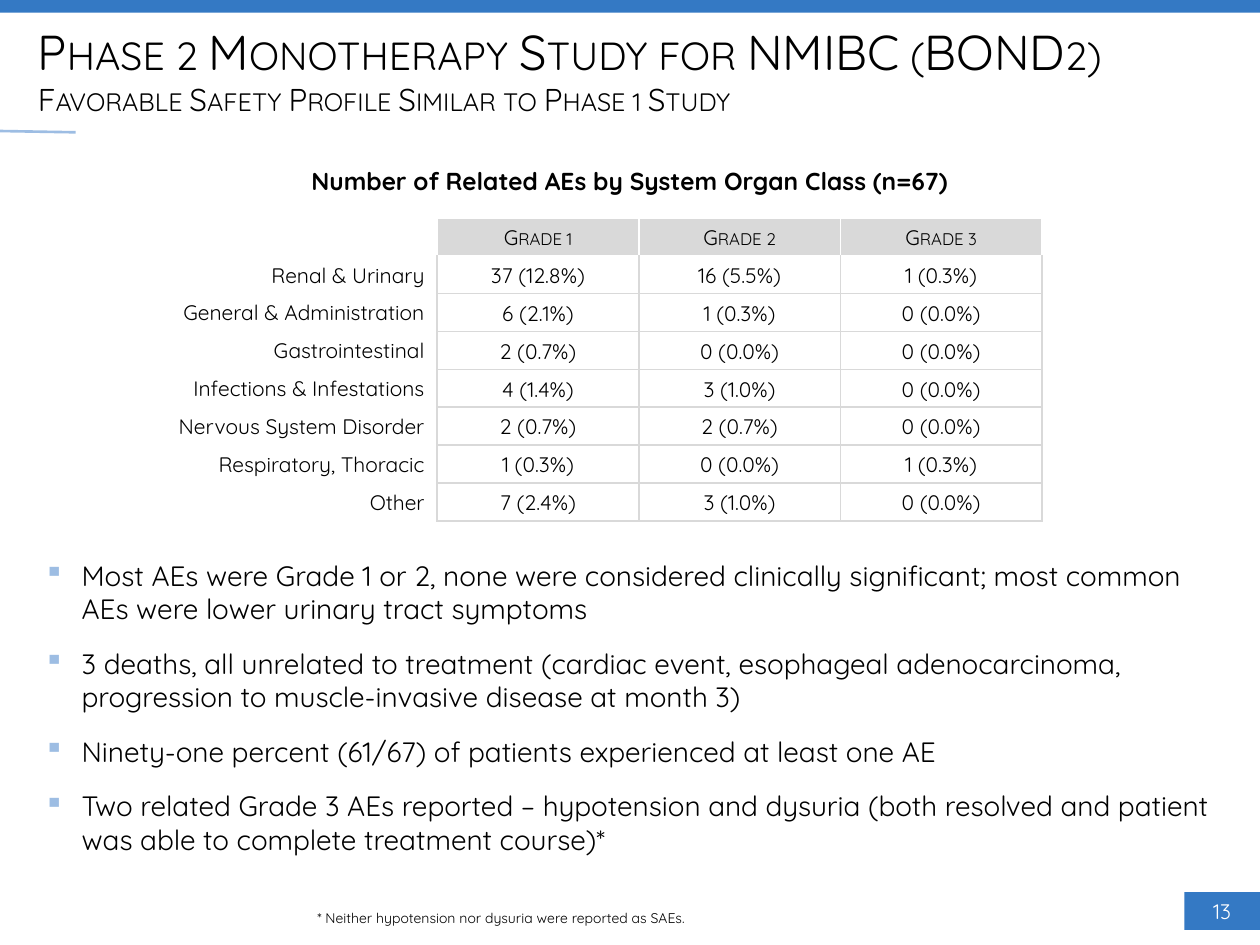
import lxml.etree
import pptx
import pptx.dml.color
import pptx.enum.shapes
import pptx.enum.text
import pptx.oxml.ns
import pptx.util

Inches = pptx.util.Inches
Pt = pptx.util.Pt
RGBColor = pptx.dml.color.RGBColor
Align = pptx.enum.text.PP_ALIGN
Anchor = pptx.enum.text.MSO_ANCHOR
qn = pptx.oxml.ns.qn

BLUE = RGBColor(0x34, 0x79, 0xC4)
LIGHT_BLUE = RGBColor(0x9D, 0xBD, 0xE3)
GREY = RGBColor(0xD9, 0xD9, 0xD9)
WHITE = RGBColor(0xFF, 0xFF, 0xFF)
BLACK = RGBColor(0, 0, 0)
FONT = "Quicksand"

GRADES = ["Grade 1", "Grade 2", "Grade 3"]
EVENTS = [
    ("Renal & Urinary", "37 (12.8%)", "16 (5.5%)", "1 (0.3%)"),
    ("General & Administration", "6 (2.1%)", "1 (0.3%)", "0 (0.0%)"),
    ("Gastrointestinal", "2 (0.7%)", "0 (0.0%)", "0 (0.0%)"),
    ("Infections & Infestations", "4 (1.4%)", "3 (1.0%)", "0 (0.0%)"),
    ("Nervous System Disorder", "2 (0.7%)", "2 (0.7%)", "0 (0.0%)"),
    ("Respiratory, Thoracic", "1 (0.3%)", "0 (0.0%)", "1 (0.3%)"),
    ("Other", "7 (2.4%)", "3 (1.0%)", "0 (0.0%)"),
]
FINDINGS = [
    "Most AEs were Grade 1 or 2, none were considered clinically significant; "
    "most common AEs were lower urinary tract symptoms",
    "3 deaths, all unrelated to treatment (cardiac event, esophageal "
    "adenocarcinoma, progression to muscle-invasive disease at month 3)",
    "Ninety-one percent (61/67) of patients experienced at least one AE",
    "Two related Grade 3 AEs reported – hypotension and dysuria (both resolved "
    "and patient was able to complete treatment course)*",
]


def style_font(font, size, color=BLACK, bold=False, small_caps=False):
    font.name = FONT
    font.size = Pt(size)
    font.bold = bold
    font.color.rgb = color
    if small_caps:
        font._element.set("cap", "small")


def add_bar(slide, left, top, width, height):
    bar = slide.shapes.add_shape(
        pptx.enum.shapes.MSO_SHAPE.RECTANGLE,
        Inches(left), Inches(top), Inches(width), Inches(height))
    bar.shadow.inherit = False
    bar.fill.solid()
    bar.fill.fore_color.rgb = BLUE
    bar.line.fill.background()
    return bar


def add_text_frame(slide, left, top, width, height, anchor=Anchor.TOP):
    box = slide.shapes.add_textbox(
        Inches(left), Inches(top), Inches(width), Inches(height))
    frame = box.text_frame
    frame.word_wrap = True
    frame.vertical_anchor = anchor
    return frame


def add_line_of_text(slide, box, text, size, align, bold=False):
    paragraph = add_text_frame(slide, *box, Anchor.BOTTOM).paragraphs[0]
    paragraph.text = text
    paragraph.alignment = align
    style_font(paragraph.font, size, bold=bold)
    return paragraph


def add_accent_line(slide, left, top, right, bottom):
    line = slide.shapes.add_connector(
        pptx.enum.shapes.MSO_CONNECTOR.STRAIGHT,
        Inches(left), Inches(top), Inches(right), Inches(bottom))
    line.line.color.rgb = LIGHT_BLUE
    line.line.width = Pt(1.5)
    lxml.etree.SubElement(line._element.spPr, qn("a:effectLst"))


def add_page_number(slide, left, top, width, height, number):
    frame = add_bar(slide, left, top, width, height).text_frame
    frame.vertical_anchor = Anchor.MIDDLE
    paragraph = frame.paragraphs[0]
    paragraph.text = number
    paragraph.alignment = Align.CENTER
    style_font(paragraph.font, 12, WHITE)


def add_title(slide, left, top, width, height, title, subtitle):
    frame = add_text_frame(slide, left, top, width, height)
    frame.margin_left = frame.margin_right = Inches(0.3)
    paragraph = frame.paragraphs[0]
    title_run = paragraph.add_run()
    title_run.text = title
    paragraph.add_line_break()
    subtitle_run = paragraph.add_run()
    subtitle_run.text = subtitle
    for run, size in ((title_run, 28), (subtitle_run, 18)):
        style_font(run.font, size, small_caps=True)


def set_borders(cell, **colors):
    """Draw 1 pt borders; sides without a colour get no line."""
    properties = cell._tc.get_or_add_tcPr()
    for side in ("L", "R", "T", "B"):
        line = lxml.etree.SubElement(properties, qn(f"a:ln{side}"), w="12700")
        if side in colors:
            fill = lxml.etree.SubElement(line, qn("a:solidFill"))
            lxml.etree.SubElement(fill, qn("a:srgbClr"), val=str(colors[side]))
        else:
            lxml.etree.SubElement(line, qn("a:noFill"))


def fill_cell(cell, text, row, column):
    header, label = row == 0, column == 0
    # Borders come before the fill in the cell properties
    if label:
        set_borders(cell, R=WHITE if header else GREY)
    elif header:
        set_borders(cell, L=WHITE, R=WHITE, T=WHITE, B=WHITE)
    else:
        set_borders(cell, L=GREY, R=GREY, T=WHITE if row == 1 else GREY, B=GREY)
    if header and not label:
        cell.fill.solid()
        cell.fill.fore_color.rgb = GREY
    else:
        cell.fill.background()

    cell.vertical_anchor = Anchor.MIDDLE
    paragraph = cell.text_frame.paragraphs[0]
    paragraph.text = text
    paragraph.alignment = Align.RIGHT if label else Align.CENTER
    if not header and not label:
        cell.margin_left = cell.margin_right = Inches(0.07)
        cell.margin_top = cell.margin_bottom = 0
        paragraph.line_spacing = 1.07
    style_font(paragraph.font, 12, small_caps=header)


def add_events_table(slide, left, top, width, height, label_width):
    rows = [("", *GRADES), *EVENTS]
    table = slide.shapes.add_table(
        len(rows), len(rows[0]),
        Inches(left), Inches(top), Inches(width), Inches(height)).table
    table.first_row = table.horz_banding = False
    grade_width = (width - label_width) / len(GRADES)
    for index, column in enumerate(table.columns):
        column.width = Inches(grade_width if index else label_width)
    for row, texts in enumerate(rows):
        table.rows[row].height = Inches(height / len(rows))
        for column, text in enumerate(texts):
            fill_cell(table.cell(row, column), text, row, column)


def add_findings(slide, left, top, width, height):
    frame = add_text_frame(slide, left, top, width, height)
    for index, text in enumerate(FINDINGS):
        paragraph = frame.add_paragraph() if index else frame.paragraphs[0]
        paragraph.text = text
        paragraph.space_after = Pt(12)
        properties = paragraph._p.get_or_add_pPr()
        properties.set("marL", str(Inches(0.3)))
        properties.set("indent", str(-Inches(0.3)))
        color = lxml.etree.SubElement(properties, qn("a:buClr"))
        lxml.etree.SubElement(color, qn("a:srgbClr"), val=str(LIGHT_BLUE))
        lxml.etree.SubElement(properties, qn("a:buChar"), char="▪")
        style_font(paragraph.font, 16)


def main():
    presentation = pptx.Presentation()
    presentation.slide_width = Inches(10)
    presentation.slide_height = Inches(7.5)
    slide = presentation.slides.add_slide(presentation.slide_layouts[6])

    # Frame of the page
    add_bar(slide, 0, 0, 10, 0.1)
    add_accent_line(slide, 0, 1.04, 0.6, 1.05)
    add_page_number(slide, 9.4, 7.08, 0.6, 0.3, "13")

    # Content
    add_title(slide, 0, 0.12, 10, 0.9,
              "Phase 2 Monotherapy Study for NMIBC (BOND2)",
              "Favorable Safety Profile Similar to Phase 1 Study")
    add_events_table(slide, 1.17, 1.73, 7.1, 2.4, label_width=2.3)
    heading = add_line_of_text(
        slide, (2.3, 1, 5.4, 0.6),
        "Number of Related AEs by System Organ Class (n=67)",
        14, Align.CENTER, bold=True)
    heading.space_after = Pt(12)
    add_findings(slide, 0.25, 4.38, 9.5, 2.42)
    add_line_of_text(
        slide, (2.42, 6.93, 6.8, 0.47),
        "* Neither hypotension nor dysuria were reported as SAEs.", 8, Align.LEFT)

    presentation.save("out.pptx")


if __name__ == "__main__":
    main()
